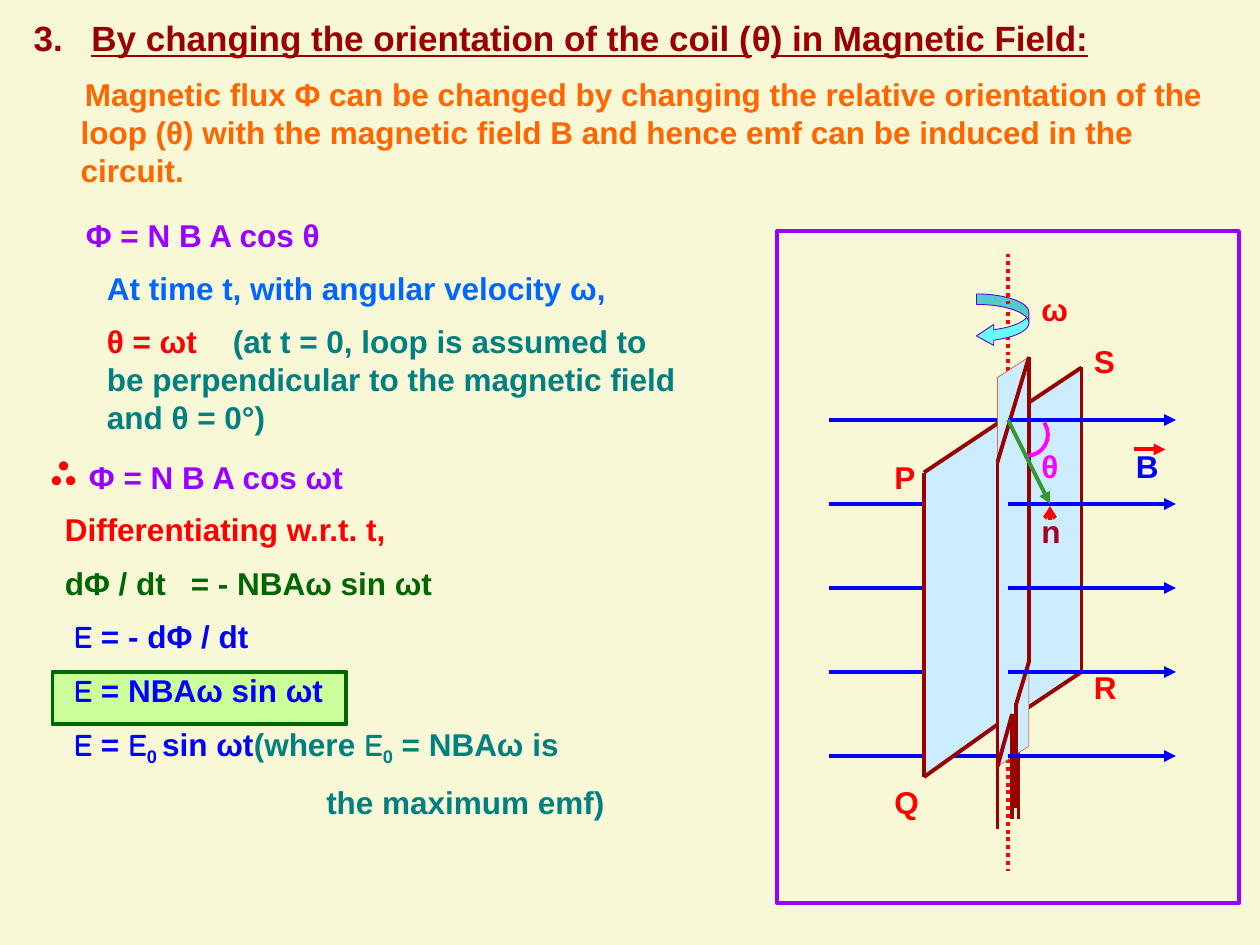
import pptx
import pptx.dml.color
import pptx.enum.dml
import pptx.enum.shapes
import pptx.enum.text
import pptx.oxml.ns
import pptx.util
from lxml import etree

SHAPE = pptx.enum.shapes.MSO_SHAPE
CELLS_PER_INCH = 12
RED, MAROON, BLUE = "FF0000", "990000", "0000FF"
PURPLE, TEAL, GREEN, SKY = "9900FF", "008080", "006600", "CCECFF"
EMF = "Comic Neue"


def cells(count):
    """Length of a number of grid cells, twelve to the inch."""
    return pptx.util.Inches(count / CELLS_PER_INCH)


def colour(value):
    return pptx.dml.color.RGBColor.from_string(value)


def add_child(parent, tag, **attributes):
    child = etree.SubElement(parent, pptx.oxml.ns.qn(tag))
    for name, value in attributes.items():
        child.set(name, str(value))
    return child


class Sheet:
    """The current slide, drawn on a grid of 120 columns by 90 rows."""

    font = "Arial"
    size = 18
    weight = 2.25

    def __init__(self, deck, background):
        self.page = deck.slides.add_slide(deck.slide_layouts[5])
        fill = self.page.background.fill
        fill.solid()
        fill.fore_color.rgb = colour(background)

    def fill_para(self, para, spans, ink, size=None, margin=0, indent=0, tab=None):
        """Fill a paragraph; a span is a text, or a text and its own settings."""
        para.font.name, para.font.bold = self.font, True
        para.font.size = pptx.util.Pt(size or self.size)
        para.font.color.rgb = colour(ink)
        para.alignment = pptx.enum.text.PP_ALIGN.LEFT
        settings = para._p.get_or_add_pPr()
        settings.set("marL", str(cells(margin)))
        settings.set("indent", str(cells(indent)))
        if tab:
            stops = etree.Element(pptx.oxml.ns.qn("a:tabLst"))
            add_child(stops, "a:tab", pos=cells(tab), algn="l")
            settings.find(pptx.oxml.ns.qn("a:defRPr")).addprevious(stops)
        for item in spans:
            text, own = (item, {}) if isinstance(item, str) else item
            span = para.add_run()
            span.text = text
            if "ink" in own:
                span.font.color.rgb = colour(own["ink"])
            if "font" in own:
                span.font.name = own["font"]
            if "underline" in own:
                span.font.underline = own["underline"]
            if "sub" in own:
                span.font._element.set("baseline", "-25000")

    def title(self, x, y, width, height, spans, ink, **style):
        box = self.page.shapes.title
        box.left, box.top, box.width, box.height = map(cells, (x, y, width, height))
        frame = box.text_frame
        frame.vertical_anchor = pptx.enum.text.MSO_ANCHOR.TOP
        frame.auto_size = pptx.enum.text.MSO_AUTO_SIZE.NONE
        self.fill_para(frame.paragraphs[0], spans, ink, **style)

    def text(self, x, y, width, height, *paragraphs):
        """Add a text box; a paragraph is its spans, colour and layout."""
        box = self.page.shapes.add_textbox(*map(cells, (x, y, width, height)))
        frame = box.text_frame
        frame.word_wrap = True
        for index, (spans, ink, layout) in enumerate(paragraphs):
            para = frame.add_paragraph() if index else frame.paragraphs[0]
            if index:
                para.space_before = pptx.util.Pt(self.size / 2)
            self.fill_para(para, spans, ink, **layout)

    def label(self, x, y, words, ink, width=6):
        self.text(x, y, width, 4.8, ([words], ink, {}))

    def shape(self, kind, x, y, width, height, fill=None, line=None,
              weight=None, adjust=()):
        shape = self.page.shapes.add_shape(kind, *map(cells, (x, y, width, height)))
        shape.shadow.inherit = False
        for index, value in enumerate(adjust):
            shape.adjustments[index] = value
        if fill:
            shape.fill.solid()
            shape.fill.fore_color.rgb = colour(fill)
        else:
            shape.fill.background()
        if line:
            shape.line.color.rgb = colour(line)
            shape.line.width = pptx.util.Pt(weight or self.weight)
        else:
            shape.line.fill.background()
        return shape

    def line(self, start, end, ink, head=None, dotted=False):
        connector = self.page.shapes.add_connector(
            pptx.enum.shapes.MSO_CONNECTOR.STRAIGHT, *map(cells, start + end))
        connector.line.color.rgb = colour(ink)
        connector.line.width = pptx.util.Pt(self.weight)
        if dotted:
            connector.line.dash_style = pptx.enum.dml.MSO_LINE.ROUND_DOT
        if head:
            add_child(connector.line._get_or_add_ln(), "a:tailEnd", type=head)
        add_child(connector._element.spPr, "a:effectLst")

    def coil(self, left, right, top, gap, line=None, weight=None):
        """Draw a tilted loop, open at the two gap points where its leads hang."""
        drop, lead = 29, 10
        length, width = drop + 10, right - left
        middle_x, middle_y = (left + right) / 2, top - 10 + length / 2
        face = self.shape(SHAPE.PARALLELOGRAM, middle_x - length / 2,
                          middle_y - width / 2, length, width, SKY, line,
                          weight, (0.65,))
        face.rotation = 90
        face._element.spPr.xfrm.set("flipH", "1")
        for x, y in gap:
            self.line((x, y), (x, y + lead), MAROON)
        corners = (left, top), (right, top - 10)
        for (x, y), opening in zip(corners, gap):
            self.line((x, y), (x, y + drop), MAROON)
            self.line((x, y + drop), opening, MAROON)
        self.line(*corners, MAROON)


def draw_text(sheet):
    sheet.title(2, 1, 114, 5.5, [
        "3.\t", ("By changing the orientation of the coil (", {"underline": True}),
        "θ", (") in Magnetic Field:", {"underline": True}),
    ], MAROON, size=20, margin=5.5, indent=-5.5)
    sheet.text(2, 6.6, 114, 12, ([
        "Magnetic flux Φ can be changed by changing the relative orientation of the "
        "loop (θ) with the magnetic field B and hence emf can be induced in the circuit.",
    ], "FF6600", {"margin": 4.5, "indent": 0.4}))
    sheet.label(7, 20, "Φ = N B A cos θ", PURPLE, width=28)
    sheet.text(
        9, 25, 57, 17.4,
        (["At time t, with angular velocity ω,"], "0066FF", {}),
        ([("θ = ωt\t", {"ink": RED}), "(at t = 0, loop is assumed to be "
          "perpendicular to the magnetic field and θ = 0°)"], TEAL, {"tab": 13.5}))
    for x, y in ((5, 45.4), (6.35, 45.4), (5.68, 44)):
        sheet.shape(SHAPE.OVAL, x, y, 0.75, 0.75, RED, RED, 0.75)
    sheet.label(7.3, 43, "Φ = N B A cos ωt", PURPLE, width=30)


def draw_derivation(sheet):
    emf, zero = ("E", {"font": EMF}), {"sub": True}
    teal = {"ink": TEAL}
    step = {"indent": 0.83}
    sheet.shape(SHAPE.RECTANGLE, 5, 64, 28, 5, "CCFF99", GREEN)
    sheet.text(
        5, 48, 60, 32,
        (["Differentiating w.r.t. t,"], RED, {}),
        (["dΦ / dt\t= - NBAω sin ωt"], GREEN, {"tab": 11.2}),
        ([emf, " = - dΦ / dt"], BLUE, step),
        ([emf, " = NBAω sin ωt"], BLUE, step),
        ([emf, " = ", emf, ("0 ", zero), "sin ωt\t", ("(where ", teal),
          ("E", {"font": EMF, **teal}), ("0", {**zero, **teal}),
          (" = NBAω is", teal)], BLUE, {**step, "tab": 21.3}),
        (["the maximum emf)"], TEAL, {"margin": 24.9}))


def draw_diagram(sheet):
    axis = 96
    field_rows = range(40, 73, 8)
    sheet.line((axis, 29), (axis, 83), RED, dotted=True)
    for x, y, corner in ((84, 43, "P"), (84, 74, "Q"), (103, 63, "R"), (103, 32, "S")):
        sheet.label(x, y, corner, RED)
    for row in field_rows:
        sheet.line((79, row), (axis, row), BLUE)
    sheet.coil(88, 103, 45, ((95, 69), (97, 68)))
    sheet.label(107, 42, "B", BLUE)
    sheet.line((108, 42.8), (111, 42.8), RED, "triangle")
    sheet.coil(95, 98, 44, ((96.4, 68), (96.8, 67)), "CC3300", 0.25)
    for row in field_rows:
        sheet.line((axis, row), (112, row), BLUE, "triangle")

    # Arc angles count in 0.6 per degree: from 325 to 97 degrees.
    sheet.shape(SHAPE.ARC, 95.8, 39.4, 4, 4, line="FF00FF", adjust=(195, 58.2))
    sheet.label(98, 42, "θ", "FF00FF")
    sheet.shape(SHAPE.CURVED_LEFT_ARROW, 93, 28, 5, 5, "66FFFF", "6600CC", 0.5,
                (0.2, 0.4, 0.33))
    sheet.line((axis, 29), (axis, 24), RED, dotted=True)
    sheet.shape(SHAPE.RECTANGLE, 74, 22, 44, 64, line=PURPLE)
    sheet.label(98, 27, "ω", RED)
    sheet.line((axis, 40), (100, 48), "339933", "triangle")
    sheet.line((100, 49.2), (100, 48.2), RED, "arrow")
    sheet.label(98, 48.2, "n", "A50021")


def main():
    deck = pptx.Presentation()
    deck.slide_width, deck.slide_height = cells(120), cells(90)
    sheet = Sheet(deck, "F8F7D6")
    draw_text(sheet)
    draw_diagram(sheet)
    draw_derivation(sheet)
    deck.save("out.pptx")


if __name__ == "__main__":
    main()
